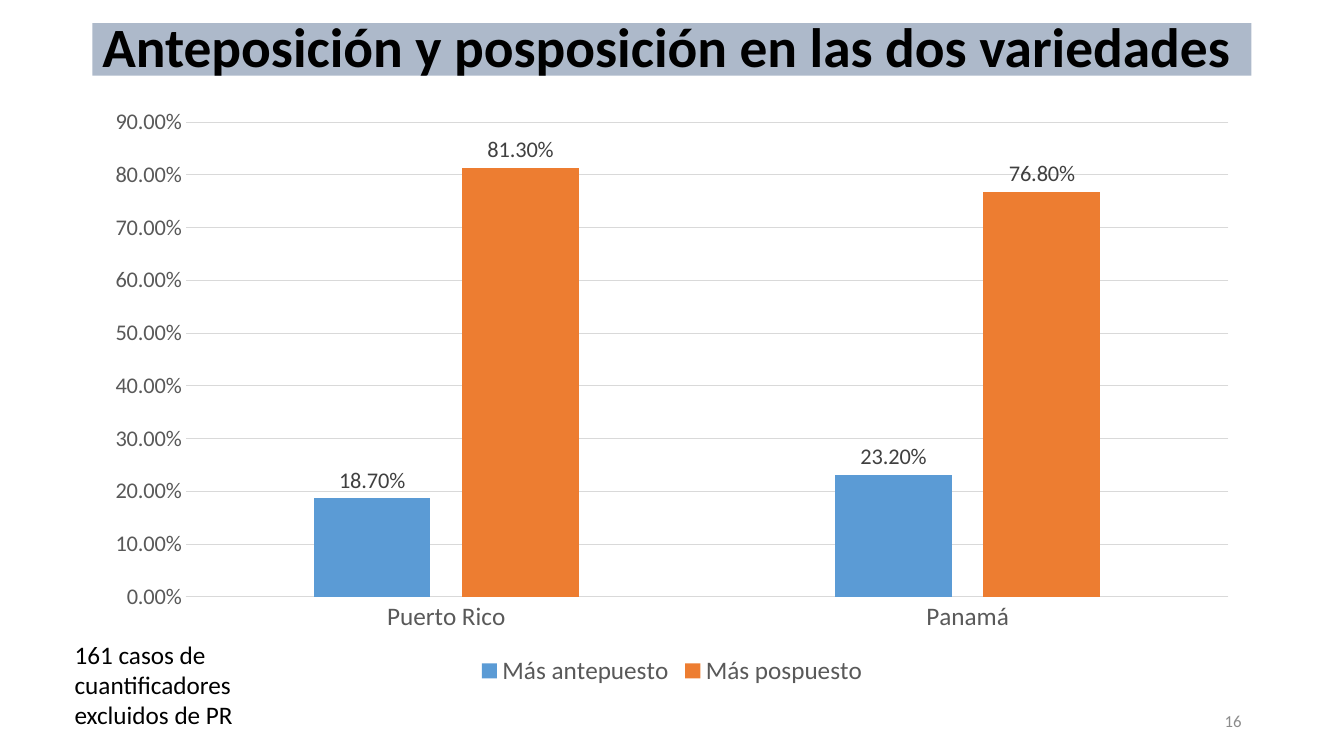
from pptx import Presentation
from pptx.chart.data import CategoryChartData
from pptx.dml.color import RGBColor
from pptx.enum.chart import XL_CHART_TYPE, XL_LABEL_POSITION, XL_LEGEND_POSITION, XL_TICK_MARK
from pptx.enum.text import MSO_ANCHOR, PP_ALIGN
from pptx.util import Inches, Pt

COLUMN = XL_CHART_TYPE.COLUMN_CLUSTERED
OUTSIDE = XL_LABEL_POSITION.OUTSIDE_END
BOTTOM = XL_LEGEND_POSITION.BOTTOM
NO_TICK = XL_TICK_MARK.NONE
TOP, MIDDLE = MSO_ANCHOR.TOP, MSO_ANCHOR.MIDDLE
LEFT, RIGHT = PP_ALIGN.LEFT, PP_ALIGN.RIGHT

COLS, ROWS = 160, 90
PERCENT = "0.00%"


def rgb(color):
    return RGBColor.from_string(color)


def set_font(font, size, color, bold=False, name="Calibri"):
    font.name = name
    font.size = Pt(size)
    font.bold = bold
    font.color.rgb = rgb(color)


def write(tf, text, size=18, color="000000", bold=False, align=LEFT, anchor=TOP, spacing=1.0):
    tf.word_wrap = True
    tf.vertical_anchor = anchor
    p = tf.paragraphs[0]
    p.alignment = align
    p.line_spacing = spacing
    r = p.add_run()
    r.text = text
    set_font(r.font, size, color, bold)


class SlideBuilder:
    text_color = "595959"
    label_color = "404040"
    line_color = "D9D9D9"

    def __init__(self, prs):
        self.col = prs.slide_width / COLS
        self.row = prs.slide_height / ROWS
        self.s = prs.slides.add_slide(prs.slide_layouts[6])

    def place(self, col, row, cols, rows):
        return (round(col * self.col), round(row * self.row),
                round(cols * self.col), round(rows * self.row))

    def text(self, cell, text, fill=None, **fmt):
        sp = self.s.shapes.add_textbox(*self.place(*cell))
        if fill:
            sp.fill.solid()
            sp.fill.fore_color.rgb = rgb(fill)
        write(sp.text_frame, text, **fmt)

    def rule(self, line):
        line.color.rgb = rgb(self.line_color)
        line.width = Pt(0.75)

    def column_chart(self, cell, categories, series):
        data = CategoryChartData(number_format=PERCENT)
        data.categories = categories
        for name, values, _ in series:
            data.add_series(name, values)
        chart = self.s.shapes.add_chart(COLUMN, *self.place(*cell), data).chart
        set_font(chart.font, 10, "000000")
        chart.has_title = False
        chart.has_legend = True
        chart.legend.position = BOTTOM
        chart.legend.include_in_layout = False
        set_font(chart.legend.font, 18, self.text_color)

        for axis, size in ((chart.category_axis, 18), (chart.value_axis, 16)):
            axis.major_tick_mark = axis.minor_tick_mark = NO_TICK
            set_font(axis.tick_labels.font, size, self.text_color)
        self.rule(chart.category_axis.format.line)
        value_axis = chart.value_axis
        value_axis.minimum_scale, value_axis.maximum_scale = 0, 0.9
        value_axis.major_unit = 0.1
        value_axis.format.line.fill.background()
        self.rule(value_axis.major_gridlines.format.line)
        value_axis.tick_labels.number_format = PERCENT
        value_axis.tick_labels.number_format_is_linked = False

        plot = chart.plots[0]
        plot.vary_by_categories = False
        plot.gap_width, plot.overlap = 219, -27
        for bars, (_, _, color) in zip(plot.series, series):
            bars.format.fill.solid()
            bars.format.fill.fore_color.rgb = rgb(color)
            labels = bars.data_labels
            labels.show_value = True
            labels.position = OUTSIDE
            labels.number_format = PERCENT
            labels.number_format_is_linked = False
            set_font(labels.font, 16, self.label_color)


def main():
    prs = Presentation()
    prs.slide_width, prs.slide_height = Inches(40 / 3), Inches(7.5)
    slide = SlideBuilder(prs)
    slide.text((11, 2.75, 138, 6.25), "Anteposición y posposición en las dos variedades",
               fill="ADB9CA", size=39.6, bold=True, anchor=MIDDLE, spacing=0.9)
    slide.column_chart((11, 11.5, 138, 70.8), ("Puerto Rico", "Panamá"), (
        ("Más antepuesto", (0.187, 0.232), "5B9BD5"),
        ("Más pospuesto", (0.813, 0.768), "ED7D31"),
    ))
    slide.text((113, 83.4, 36, 4.8), "16", size=12, color="8C8C8C", align=RIGHT, anchor=MIDDLE)
    slide.text((7.7, 75.5, 31.9, 12.1), "161 casos de cuantificadores excluidos de PR")
    prs.save("out.pptx")


if __name__ == "__main__":
    main()
